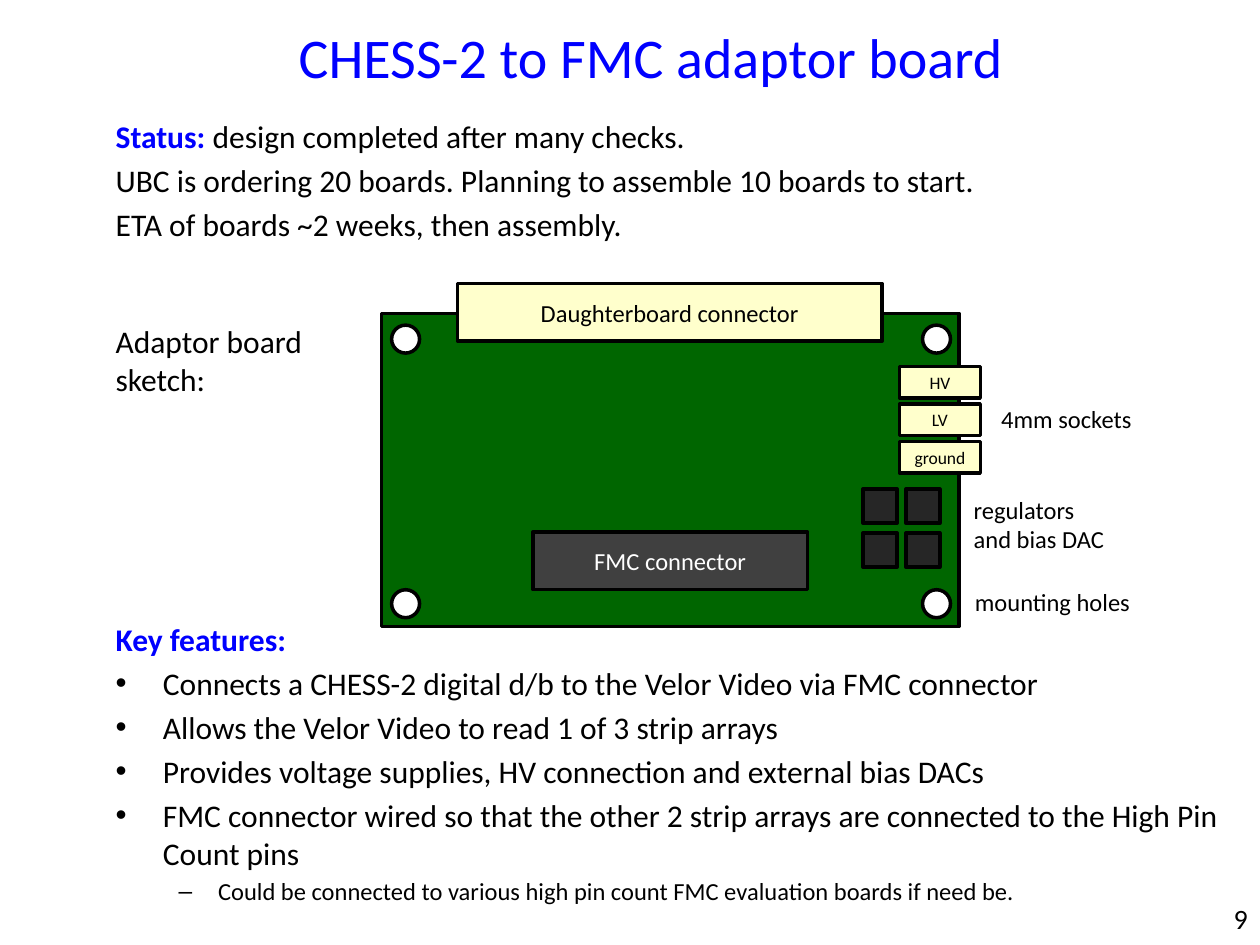
from dataclasses import dataclass
from itertools import product

from lxml.etree import SubElement
from pptx import Presentation
from pptx.dml.color import RGBColor
from pptx.enum.shapes import MSO_SHAPE as SHAPE
from pptx.enum.text import MSO_ANCHOR as ANCHOR, PP_ALIGN as ALIGN
from pptx.oxml.ns import qn
from pptx.util import Pt


@dataclass(frozen=True)
class Theme:
    font: str = "Calibri"
    blue: str = "0000FF"
    black: str = "000000"
    white: str = "FFFFFF"
    board: str = "006600"
    cream: str = "FFFFCC"
    grey: str = "404040"
    chip: str = "262626"
    title: int = 32
    body: int = 18
    number: int = 16
    label: int = 14
    small: int = 10


T = Theme()


def write(shape, paragraphs, size, color=T.black, wrap=True, **formats):
    """Fill a shape with paragraphs, each a list of (text, font overrides)."""
    tf = shape.text_frame
    tf.word_wrap = wrap
    tf.vertical_anchor = formats.pop("anchor", ANCHOR.TOP)
    for i, runs in enumerate(paragraphs):
        p = tf.paragraphs[0] if i == 0 else tf.add_paragraph()
        for name, value in formats.items():
            setattr(p, name, value)
        for text, override in runs:
            r = p.add_run()
            r.text = text
            look = {"name": T.font, "size": Pt(size), "bold": False} | override
            r.font.color.rgb = RGBColor.from_string(look.pop("color", color))
            for name, value in look.items():
                setattr(r.font, name, value)
    return tf


def block(kind, box, fill, text="", size=T.label, color=T.black):
    """Draw one outlined part of the board, with an optional centred label."""
    sp = board.shapes.add_shape(kind, *map(Pt, box))
    sp.shadow.inherit = False
    sp.fill.solid()
    sp.fill.fore_color.rgb = RGBColor.from_string(fill)
    sp.line.color.rgb = RGBColor.from_string(T.black)
    sp.line.width = Pt(2)
    if text:
        write(sp, [[(text, {})]], size, color, wrap=False,
              anchor=ANCHOR.MIDDLE, alignment=ALIGN.CENTER)


prs = Presentation()
prs.slide_width, prs.slide_height = Pt(720), Pt(540)
s = prs.slides.add_slide(prs.slide_layouts[6])
heading = {"bold": True, "color": T.blue}

# Title and slide number
title = s.shapes.add_textbox(Pt(48), Pt(9.5), Pt(648), Pt(45))
write(title, [[("CHESS-2 to FMC adaptor board", {})]], T.title, T.blue,
      anchor=ANCHOR.MIDDLE, alignment=ALIGN.CENTER)
number = s.shapes.add_textbox(Pt(677.5), Pt(510.5), Pt(42.5), Pt(29))
write(number, [[("9", {})]], T.number,
      anchor=ANCHOR.MIDDLE, alignment=ALIGN.RIGHT)

# Status
status = s.shapes.add_textbox(Pt(59), Pt(63.5), Pt(646.5), Pt(36))
write(status, [
    [("Status: ", heading), ("design completed after many checks.", {})],
    [("UBC is ordering 20 boards. Planning to assemble 10 boards to start.", {})],
    [("ETA of boards ~2 weeks, then assembly.", {})],
], T.body, space_before=Pt(3.6))

# Key features, with bullets at two levels
features = s.shapes.add_textbox(Pt(59), Pt(350.5), Pt(646.5), Pt(36))
tf = write(features, [
    [("Key features:", heading)],
    [("Connects a CHESS-2 digital d/b to the Velor Video via FMC connector", {})],
    [("Allows the Velor Video to read 1 of 3 strip arrays", {})],
    [("Provides voltage supplies, HV connection and external bias DACs", {})],
    [("FMC connector wired so that the other 2 strip arrays are connected "
      "to the High Pin Count pins", {})],
    [("Could be connected to various high pin count FMC evaluation boards "
      "if need be.", {"size": Pt(T.label)})],
], T.body, space_before=Pt(3.6))
detail = tf.paragraphs[-1]
detail.level = 1
detail.space_before = Pt(2.8)
for p in tf.paragraphs[1:]:
    mark, margin, hang = ("–", 58.5, 22.5) if p.level else ("•", 27, 27)
    pPr = p._p.get_or_add_pPr()
    pPr.set("marL", str(Pt(margin)))
    pPr.set("indent", str(-Pt(hang)))
    SubElement(pPr, qn("a:buFont")).set("typeface", "Arial")
    SubElement(pPr, qn("a:buChar")).set("char", mark)

# Caption of the sketch
caption = s.shapes.add_textbox(Pt(59), Pt(180.5), Pt(132.5), Pt(51))
write(caption, [[("Adaptor board sketch:", {})]], T.body, space_after=Pt(6))

# Board and its two connectors
board = s.shapes.add_group_shape()
block(SHAPE.RECTANGLE, (218, 179, 330, 179), T.board)
block(SHAPE.RECTANGLE, (261.5, 162, 242.5, 33), T.cream,
      "Daughterboard connector")
block(SHAPE.RECTANGLE, (304.5, 304, 157, 33), T.grey,
      "FMC connector", color=T.white)

# Mounting holes, then regulators and bias DAC
for x, y in product((223.8, 527.2), (185.8, 337)):
    block(SHAPE.OVAL, (x, y, 16, 16), T.white)
for x, y in product((493.2, 517.6), (279.5, 304.6)):
    block(SHAPE.RECTANGLE, (x, y, 19.5, 19.5), T.chip)

# Sockets
for i, name in enumerate(("HV", "LV", "ground")):
    block(SHAPE.RECTANGLE, (514, 209.3 + 21.5 * i, 46.2, 18), T.cream,
          name, T.small)

# Labels to the right of the board
for x, y, w, h, lines in (
    (565, 227.5, 94, 24.5, ["4mm sockets"]),
    (549.3, 279.3, 95, 41, ["regulators", "and bias DAC"]),
    (550, 332, 130, 24.5, ["mounting holes"]),
):
    label = board.shapes.add_textbox(Pt(x), Pt(y), Pt(w), Pt(h))
    write(label, [[(line, {})] for line in lines], T.label)

prs.save("out.pptx")
